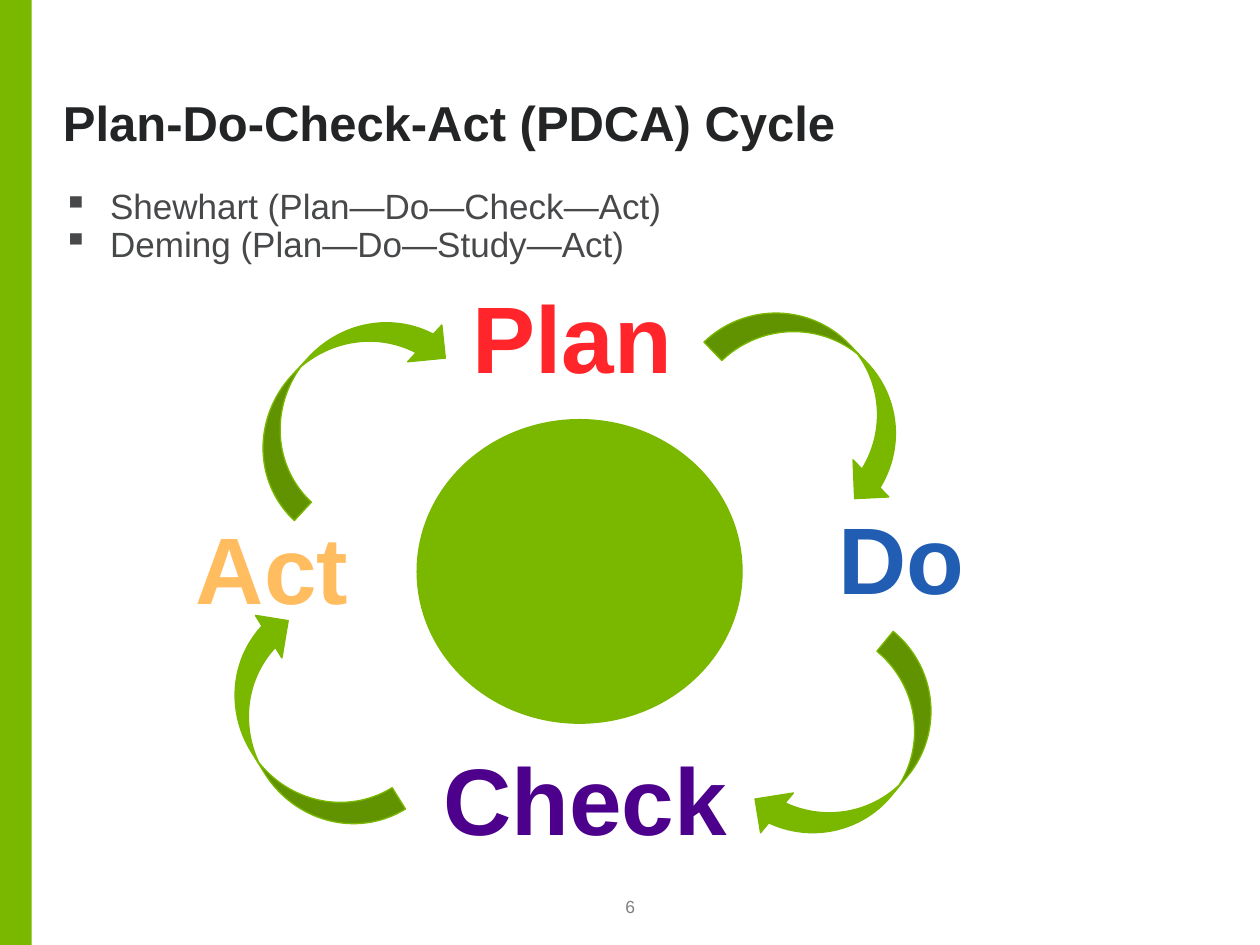
import pptx
import pptx.util
import pptx.dml.color
import pptx.enum.shapes
import pptx.enum.text
import lxml.etree

Cm, Pt = pptx.util.Cm, pptx.util.Pt
RGB = pptx.dml.color.RGBColor
SHAPE = pptx.enum.shapes.MSO_SHAPE
ALIGN = pptx.enum.text.PP_ALIGN
ANCHOR = pptx.enum.text.MSO_ANCHOR

GREEN = RGB(0x7A, 0xB8, 0x00)
DARK = RGB(0x23, 0x24, 0x25)
BODY = RGB(0x47, 0x48, 0x4A)
GREY = RGB(0x80, 0x80, 0x80)
RED = RGB(0xFF, 0x25, 0x2B)
BLUE = RGB(0x21, 0x5D, 0xB2)
PURPLE = RGB(0x4D, 0x00, 0x8C)
ORANGE = RGB(0xFF, 0xBD, 0x60)

TITLE = "Plan-Do-Check-Act (PDCA) Cycle"
BULLETS = ["Shewhart (Plan—Do—Check—Act)", "Deming (Plan—Do—Study—Act)"]
PAGE = "6"
STEPS = [
    ("Plan", (8.15, 5.49, 6.78, 2.57), RED),
    ("Do", (16.64, 9.96, 3.07, 2.57), BLUE),
    ("Check", (8.66, 14.81, 6.27, 2.57), PURPLE),
    ("Act", (3.68, 10.16, 3.61, 2.57), ORANGE),
]
ARROWS = [
    ((15.6, 5.49, 2.08, 4.9), 316.1),
    ((16.21, 12.83, 2.08, 4.9), 39.5),
    ((5.87, 5.49, 2.03, 4.98), 222.9),
    ((4.98, 12.24, 2.03, 4.98), 148.1),
]


def add_bullet(p):
    pPr = p._p.get_or_add_pPr()
    pPr.set("marL", str(Cm(0.95)))
    pPr.set("indent", str(-Cm(0.95)))
    bu = lxml.etree.SubElement(pPr, pptx.oxml.ns.qn("a:buChar"))
    bu.set("char", "▪")


def add_text(s, text, box, size, color, bold=False, align=ALIGN.LEFT,
             anchor=ANCHOR.TOP, insets=(0, 0, 0, 0), spacing=None,
             bullet=False, wrap=True):
    tf = s.shapes.add_textbox(*map(Cm, box)).text_frame
    tf.word_wrap = wrap
    tf.vertical_anchor = anchor
    tf.margin_left, tf.margin_top, tf.margin_right, tf.margin_bottom = map(Cm, insets)
    lines = [text] if isinstance(text, str) else text
    for i, line in enumerate(lines):
        p = tf.add_paragraph() if i else tf.paragraphs[0]
        p.alignment = align
        if spacing:
            p.line_spacing = spacing
        if bullet:
            add_bullet(p)
        r = p.add_run()
        r.text = line
        r.font.name = "Arial"
        r.font.size = Pt(size)
        r.font.bold = bold
        r.font.color.rgb = color


def add_green(s, kind, box, rotation=0, outline=True):
    sp = s.shapes.add_shape(kind, *map(Cm, box))
    sp.shadow.inherit = False
    sp.rotation = rotation
    sp.fill.solid()
    sp.fill.fore_color.rgb = GREEN
    if outline:
        sp.line.color.rgb = GREEN
        sp.line.width = Pt(0.75)
    else:
        sp.line.fill.background()


def main():
    prs = pptx.Presentation()
    prs.slide_width, prs.slide_height = Cm(25.4), Cm(19.05)
    s = prs.slides.add_slide(prs.slide_layouts[6])
    add_green(s, SHAPE.RECTANGLE, (0, 0, 0.64, 19.05), outline=False)
    add_text(s, TITLE, (1.27, 0.76, 23.27, 2.31), 28, DARK, bold=True,
             anchor=ANCHOR.BOTTOM, spacing=0.95)
    add_text(s, BULLETS, (1.27, 3.81, 23.27, 13.89), 20, BODY,
             spacing=0.9, bullet=True)
    add_text(s, PAGE, (12.07, 17.98, 1.27, 0.51), 10, GREY,
             align=ALIGN.CENTER, anchor=ANCHOR.BOTTOM, insets=(0, 0.13, 0, 0))
    add_green(s, SHAPE.FLOWCHART_CONNECTOR, (8.41, 8.46, 6.55, 6.12))
    for word, box, color in STEPS:
        add_text(s, word, box, 54, color, bold=True, align=ALIGN.CENTER,
                 insets=(0.25, 0.13, 0.25, 0.13), wrap=word == "Plan")
    for box, rotation in ARROWS:
        add_green(s, SHAPE.CURVED_LEFT_ARROW, box, rotation)
    prs.save("out.pptx")


if __name__ == "__main__":
    main()
